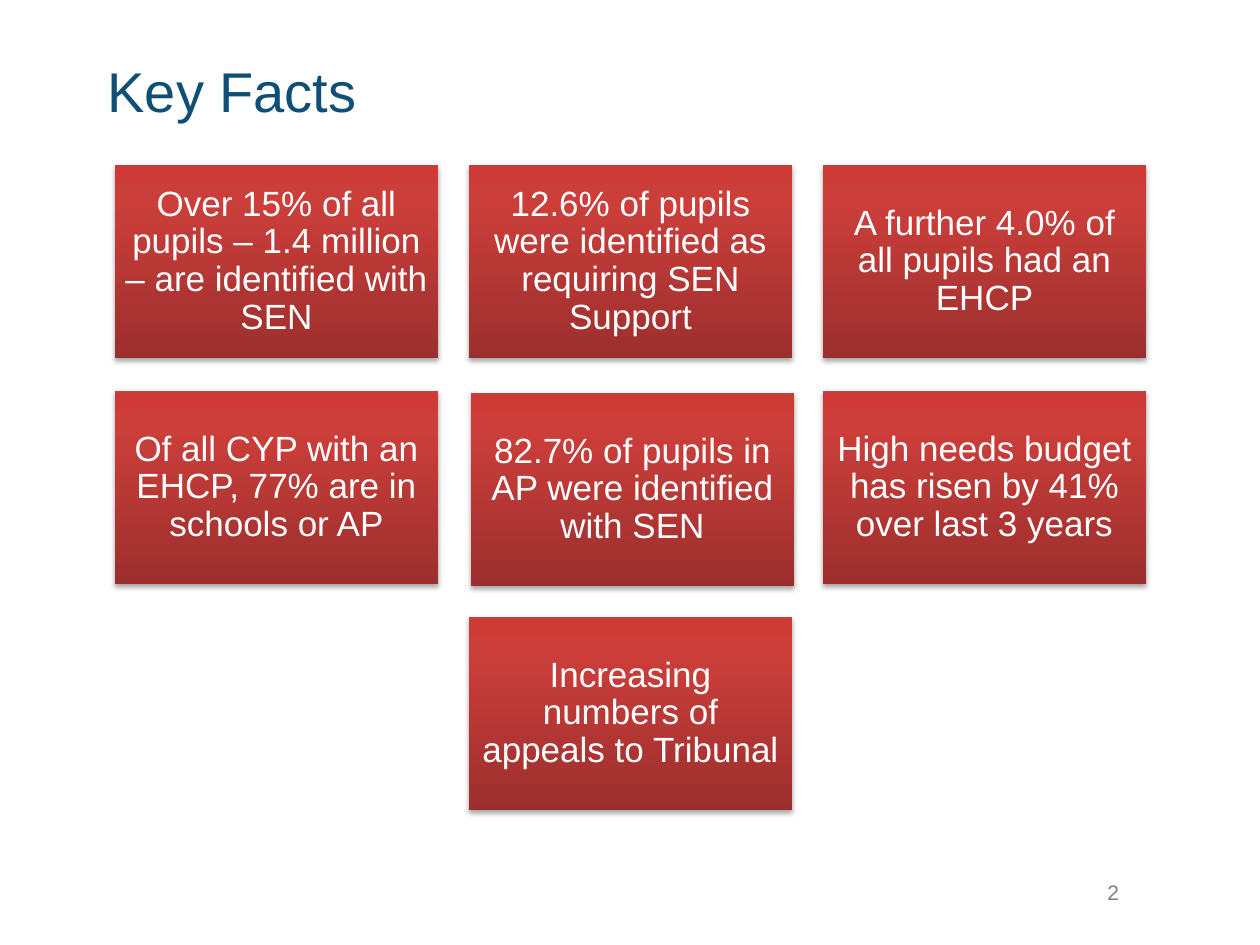
from lxml import etree
from pptx import Presentation
from pptx import util as u
from pptx.dml.color import RGBColor
from pptx.enum import shapes, text
from pptx.oxml import parse_xml
from pptx.oxml.ns import nsdecls, qn

NAVY = RGBColor(0x10, 0x4F, 0x75)
GREY = RGBColor(0x80, 0x80, 0x80)
WHITE = RGBColor(0xFF, 0xFF, 0xFF)
BLACK = RGBColor(0x00, 0x00, 0x00)
RED_STOPS = (
    (0, RGBColor(0x9C, 0x2F, 0x2D)),
    (80, RGBColor(0xCB, 0x3E, 0x3A)),
    (100, RGBColor(0xCE, 0x3B, 0x37)),
)

PX_PER_INCH = 126
TITLE_ONLY = 5

# Tile grid, in px
LEFT, TOP = 115, 165
TILE_W, TILE_H = 323, 193
GAP_X, GAP_Y = 31, 33

# column, row, nudge right and down, wording
FACTS = (
    (0, 0, 0, "Over 15% of all pupils – 1.4 million – are identified with SEN"),
    (1, 0, 0, "12.6% of pupils were identified as requiring SEN Support"),
    (2, 0, 0, "A further 4.0% of all pupils had an EHCP"),
    (0, 1, 0, "Of all CYP with an EHCP, 77% are in schools or AP"),
    (1, 1, 2, "82.7% of pupils in AP were identified with SEN"),
    (2, 1, 0, "High needs budget has risen by 41% over last 3 years"),
    (1, 2, 0, "Increasing numbers of appeals to Tribunal"),
)


def px(length):
    return u.Emu(round(length * u.Inches(1) / PX_PER_INCH))


class FactSheet:
    """Holds the text style and the slide being filled."""

    font = "Arial"

    def __init__(self, deck):
        self.page = deck.slides.add_slide(deck.slide_layouts[TITLE_ONLY])

    def set_text(self, box, wording, size, color, align, anchor):
        frame = box.text_frame
        frame.word_wrap = True
        frame.auto_size = text.MSO_AUTO_SIZE.NONE
        frame.vertical_anchor = anchor
        para = frame.paragraphs[0]
        para.alignment = align
        span = para.add_run()
        span.text = wording
        span.font.name = self.font
        span.font.size = u.Pt(size)
        span.font.color.rgb = color
        return para

    def title(self, wording, x, y, w, h):
        box = self.page.shapes.title
        box.left, box.top, box.width, box.height = map(px, (x, y, w, h))
        self.set_text(box, wording, 32, NAVY,
                      text.PP_ALIGN.LEFT, text.MSO_ANCHOR.MIDDLE)

    def label(self, wording, x, y, w, h):
        box = self.page.shapes.add_textbox(*map(px, (x, y, w, h)))
        self.set_text(box, wording, 12, GREY,
                      text.PP_ALIGN.LEFT, text.MSO_ANCHOR.TOP)

    def tile(self, wording, x, y, w, h):
        box = self.page.shapes.add_shape(
            shapes.MSO_SHAPE.RECTANGLE, *map(px, (x, y, w, h)))
        self.shade(box)
        box.line.fill.background()
        self.drop_shadow(box)
        frame = box.text_frame
        frame.margin_left = frame.margin_right = px(10)
        frame.margin_top = frame.margin_bottom = px(10)
        para = self.set_text(box, wording, 20, WHITE,
                             text.PP_ALIGN.CENTER, text.MSO_ANCHOR.MIDDLE)
        para.line_spacing = 0.9

    def shade(self, box):
        """Fill with the three-stop red gradient, darkest at the bottom."""
        box.fill.gradient()
        box.fill.gradient_angle = 90
        stops = box._element.spPr.find(qn("a:gradFill")).find(qn("a:gsLst"))
        for stop in list(stops):
            stops.remove(stop)
        for percent, color in RED_STOPS:
            stop = etree.SubElement(stops, qn("a:gs"), pos=str(percent * 1000))
            etree.SubElement(stop, qn("a:srgbClr"), val=str(color))

    def drop_shadow(self, box):
        box.shadow.inherit = False
        effects = box._element.spPr.find(qn("a:effectLst"))
        effects.append(parse_xml(
            f'<a:outerShdw {nsdecls("a")} blurRad="{u.Pt(3.1)}" dist="{u.Pt(1.8)}" '
            f'dir="5400000" rotWithShape="0"><a:srgbClr val="{BLACK}">'
            '<a:alpha val="35000"/></a:srgbClr></a:outerShdw>'))


def main():
    deck = Presentation()
    deck.slide_width, deck.slide_height = u.Inches(10), u.Inches(7.5)
    sheet = FactSheet(deck)
    sheet.title("Key Facts", 95, 45, 1071, 90)
    for column, row, nudge, wording in FACTS:
        x = LEFT + column * (TILE_W + GAP_X) + nudge
        y = TOP + row * (TILE_H + GAP_Y) + nudge
        sheet.tile(wording, x, y, TILE_W, TILE_H)
    sheet.label("2", 1095, 873, 71, 50)
    deck.save("out.pptx")


if __name__ == "__main__":
    main()
